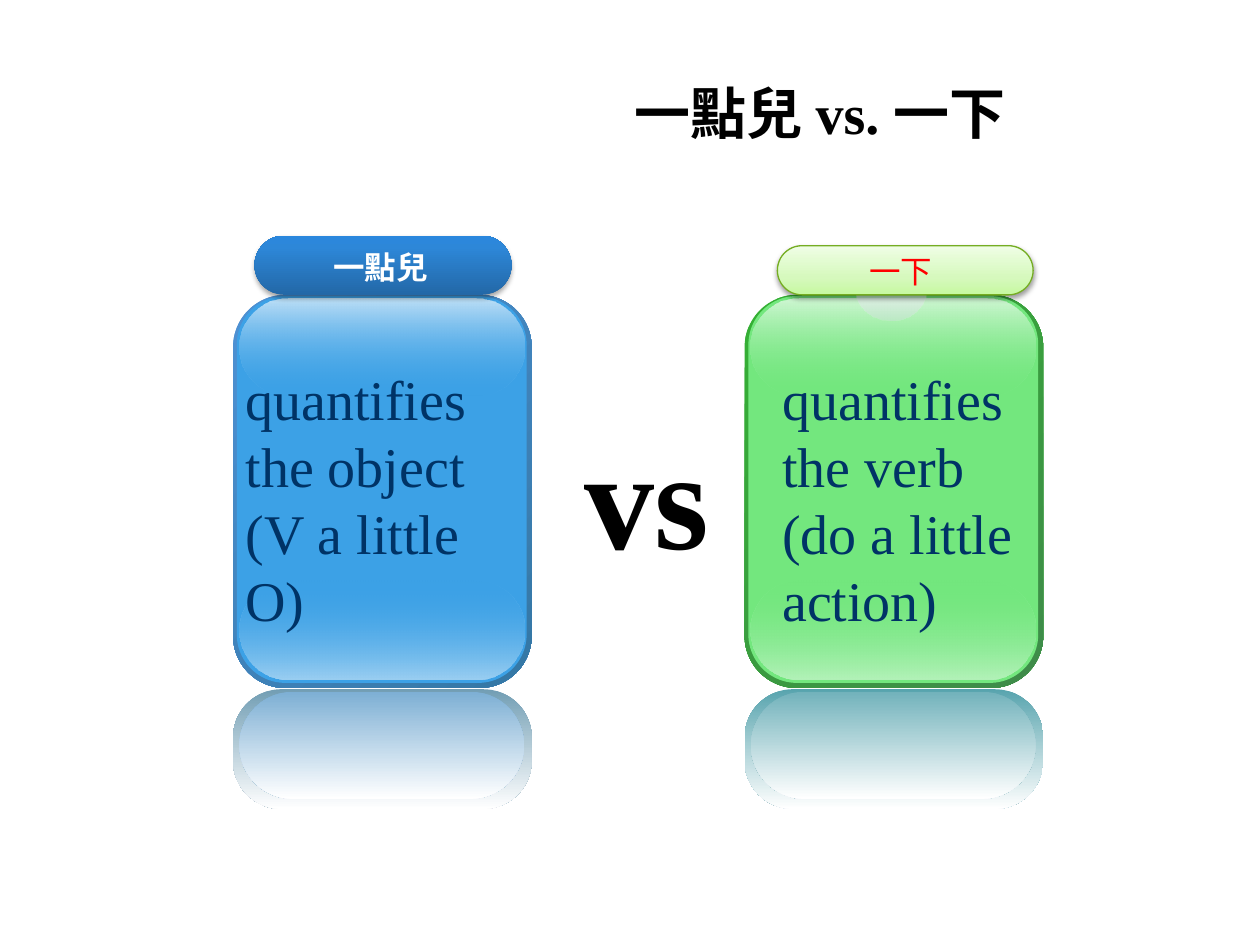
from lxml import etree
from pptx import Presentation
from pptx.dml.color import RGBColor
from pptx.enum import shapes, text
from pptx.oxml import ns
from pptx.util import Inches, Pt

BLACK = RGBColor(0x00, 0x00, 0x00)
WHITE = RGBColor(0xFF, 0xFF, 0xFF)
RED = RGBColor(0xFF, 0x00, 0x00)
NAVY = RGBColor(0x00, 0x33, 0x66)
BLUE = RGBColor(0x3C, 0xA1, 0xE6)
GREEN = RGBColor(0x73, 0xE7, 0x7E)
OLIVE = RGBColor(0x75, 0xAD, 0x22)
BLUES = {
    "rim": (RGBColor(0x4E, 0x91, 0xD4), RGBColor(0x34, 0x77, 0xA4)),
    "base": RGBColor(0x9B, 0xCF, 0xF2),
    "top": RGBColor(0xBE, 0xE0, 0xF7),
    "outer": RGBColor(0x72, 0x9E, 0xB4),
    "inner": RGBColor(0x7D, 0xAF, 0xD4),
}
GREENS = {
    "rim": (RGBColor(0x34, 0xB0, 0x34), RGBColor(0x3F, 0x8B, 0x4A)),
    "base": RGBColor(0xB3, 0xF2, 0xB9),
    "top": RGBColor(0xD0, 0xF7, 0xD4),
    "outer": RGBColor(0x58, 0xA4, 0xAE),
    "inner": RGBColor(0x72, 0xB2, 0xBB),
}
PEARL = RGBColor(0xD6, 0xE1, 0xE2)
BLUE_LID = [(0, RGBColor(0x23, 0x68, 0xA7)), (80, RGBColor(0x2D, 0x87, 0xD8)),
            (100, RGBColor(0x2A, 0x87, 0xDD))]
GREEN_LID = [(0, RGBColor(0xC6, 0xF9, 0xA0)), (35, RGBColor(0xD6, 0xF9, 0xBD)),
             (100, RGBColor(0xEF, 0xFE, 0xE5))]
SERIF = "Times New Roman"
SANS = "Noto Sans CJK SC"
A = ns.nsdecls("a")

deck = Presentation()
deck.slide_width, deck.slide_height = Inches(10), Inches(7.5)
slide = deck.slides.add_slide(deck.slide_layouts[6])


def draw(spot, fill, angle=90, round=0.5, line=None, shade=None, kind="ROUNDED_RECTANGLE"):
    shape = slide.shapes.add_shape(shapes.MSO_SHAPE[kind], *map(Inches, spot))
    shape.shadow.inherit = False
    if kind == "ROUNDED_RECTANGLE":
        shape.adjustments[0] = round
    if isinstance(fill, RGBColor):
        shape.fill.solid()
        shape.fill.fore_color.rgb = fill
    else:
        stops = "".join(
            f'<a:gs pos="{place * 1000}"><a:srgbClr val="{tint}">'
            f'<a:alpha val="{(clear or [100])[0] * 1000}"/></a:srgbClr></a:gs>'
            for place, tint, *clear in fill)
        grad = etree.fromstring(
            f'<a:gradFill {A} rotWithShape="1"><a:gsLst>{stops}</a:gsLst>'
            f'<a:lin ang="{angle * 60000}" scaled="0"/></a:gradFill>')
        shape._element.spPr.find(ns.qn("a:prstGeom")).addnext(grad)
    if line:
        shape.line.color.rgb = line
        shape.line.width = Pt(0.75)
    else:
        shape.line.fill.background()
    if shade:
        alpha, dist = shade
        shape._element.spPr.find(ns.qn("a:effectLst")).append(etree.fromstring(
            f'<a:outerShdw {A} blurRad="{Pt(3.1)}" dist="{Pt(dist)}" dir="5400000" '
            f'rotWithShape="0"><a:srgbClr val="000000"><a:alpha val="{alpha * 1000}"/>'
            '</a:srgbClr></a:outerShdw>'))


def write(words, spot, size=32, font=SERIF, tint=NAVY, bold=False, align="LEFT",
          anchor="TOP", wrap=True):
    frame = slide.shapes.add_textbox(*map(Inches, spot)).text_frame
    frame.word_wrap = wrap
    frame.vertical_anchor = text.MSO_ANCHOR[anchor]
    line = frame.paragraphs[0]
    line.alignment = text.PP_ALIGN[align]
    run = line.add_run()
    run.text = words
    run.font.size, run.font.name, run.font.bold = Pt(size), font, bold
    run.font.color.rgb = tint
    east = etree.SubElement(run._r.get_or_add_rPr(), ns.qn("a:ea"))
    east.set("typeface", SANS)


for left, body, tones in ((1.85, BLUE, BLUES), (5.91, GREEN, GREENS)):
    rim, rest = tones["rim"]
    draw((left, 2.34, 2.37, 3.12), [(0, rim), (100, rest)], angle=45, round=0.175)
    draw((left + 0.03, 2.35, 2.3, 3.07), body, round=0.167)
    draw((left + 0.05, 4.61, 2.26, 0.78), [(0, body, 0), (100, tones["base"])])
    draw((left + 0.05, 2.37, 2.26, 0.77), [(0, tones["top"]), (100, body, 0)])
    draw((left, 5.47, 2.37, 0.95), [(0, tones["outer"]), (100, WHITE)], round=0.404)
    draw((left + 0.05, 5.49, 2.26, 0.85), [(0, tones["inner"]), (100, WHITE)])

draw((6.79, 2.04, 0.56, 0.5), [(0, WHITE), (100, PEARL, 38)], kind="OVAL")
write("quantifies the object (V a little O)", (1.85, 2.84, 2.45, 1.72))
write("quantifies the verb (do a little action)", (6.11, 2.84, 2.25, 3.1))
write("vs", (4.53, 3.2, 1.2, 1.45), size=80, tint=BLACK, bold=True, align="CENTER", wrap=False)

draw((2.02, 1.87, 2.04, 0.47), BLUE_LID, angle=270, shade=(35, 1.8))
draw((6.17, 1.95, 2.03, 0.39), GREEN_LID, angle=270, line=OLIVE, shade=(38, 1.6))
write("一點兒", (2.28, 1.92, 1.48, 0.4), size=18, font=SANS, tint=WHITE, bold=True, align="CENTER")
write("一下", (6.41, 1.95, 1.48, 0.4), size=18, font=SANS, tint=RED, align="CENTER")
write("一點兒 vs. 一下", (0.6, 0.58, 7.48, 0.62), tint=BLACK, bold=True, align="RIGHT",
      anchor="MIDDLE")

deck.save("out.pptx")
